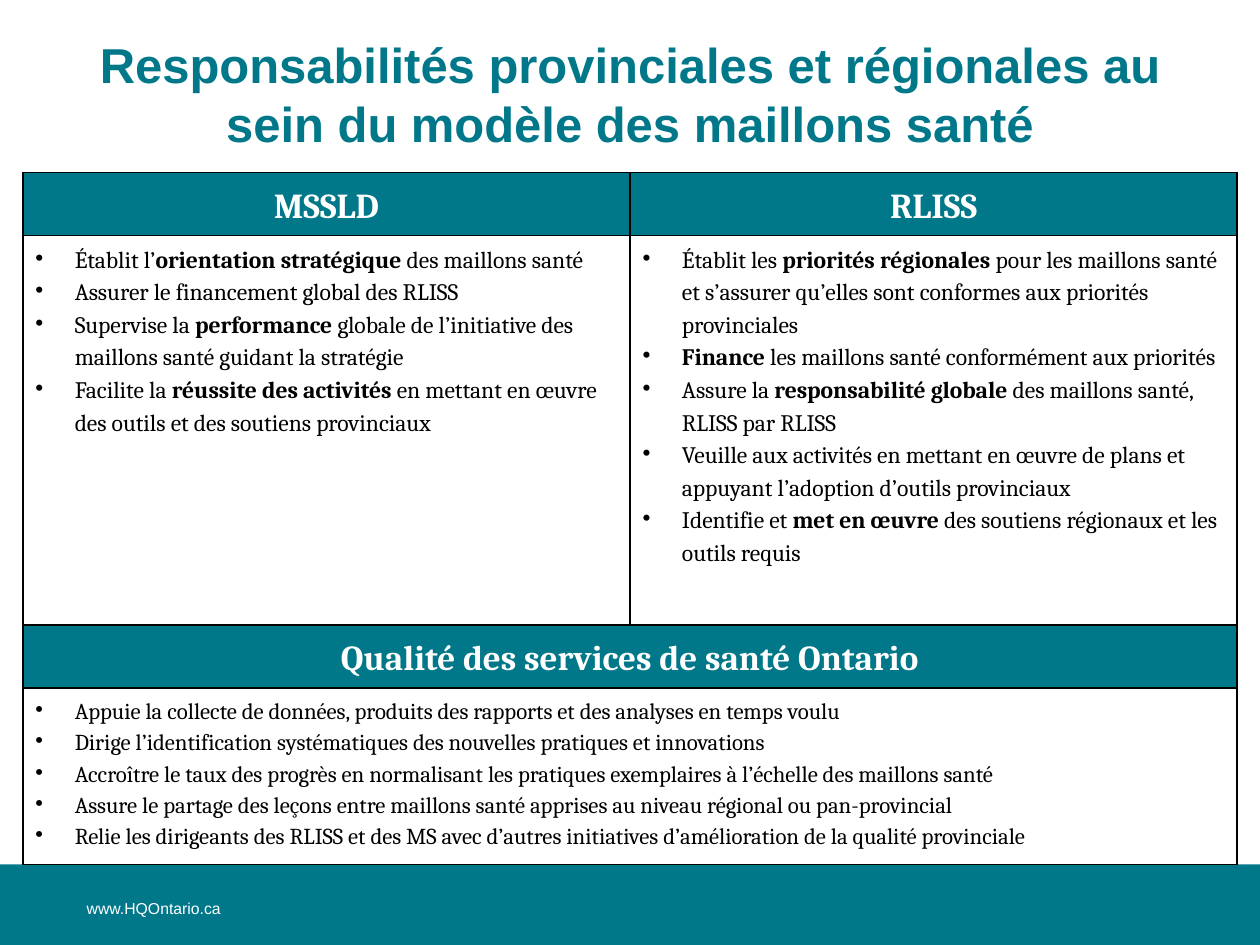
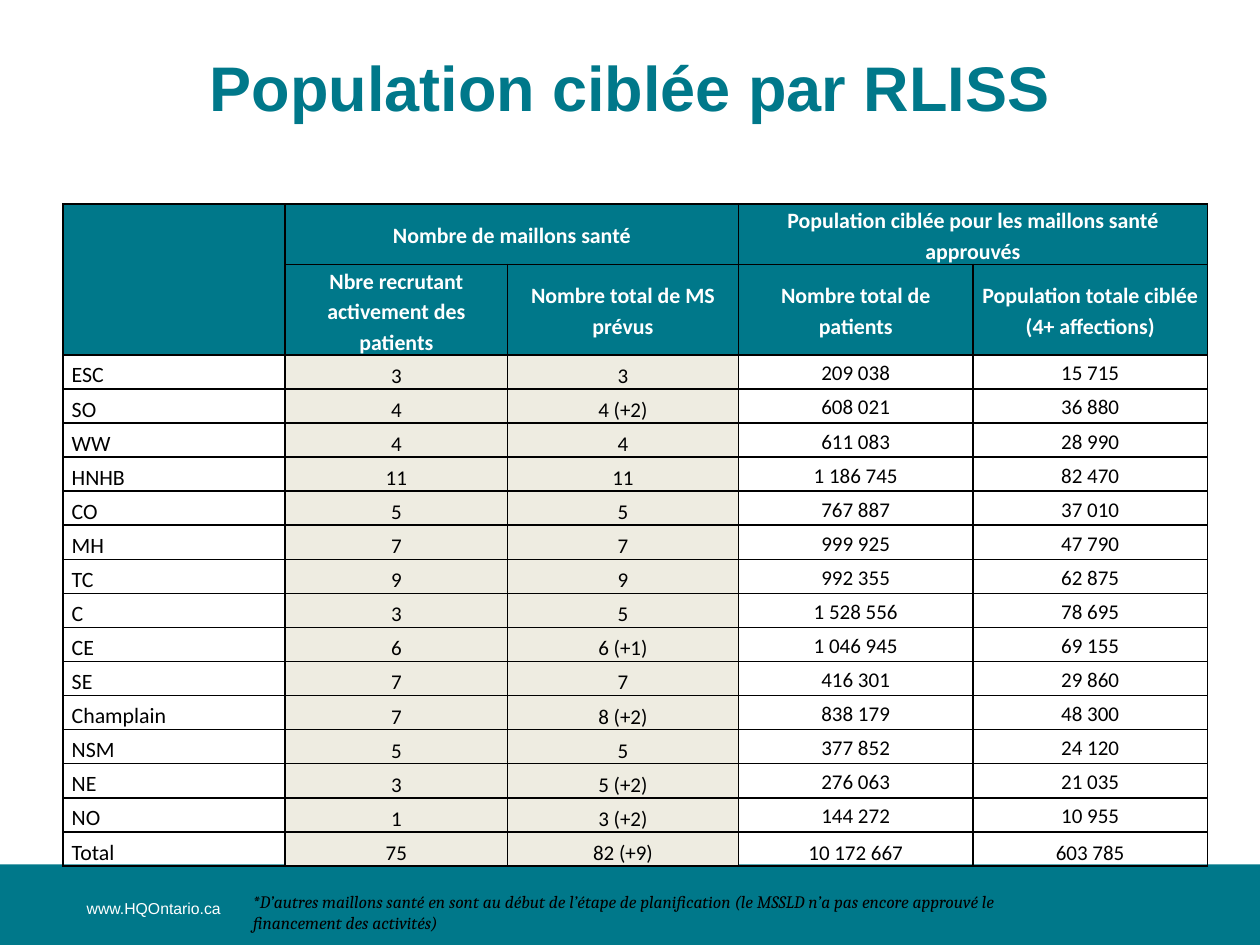
from dataclasses import dataclass, replace
from typing import NamedTuple, Optional

from lxml.etree import SubElement
from pptx import Presentation
from pptx.dml.color import RGBColor
from pptx.enum.shapes import MSO_SHAPE as Preset
from pptx.enum.text import MSO_ANCHOR as Anchor, MSO_AUTO_SIZE as AutoSize, PP_ALIGN as Align
from pptx.oxml.ns import qn
from pptx.util import Pt

TEAL = RGBColor(0x00, 0x78, 0x8A)
BEIGE = RGBColor(0xEE, 0xEC, 0xE1)
WHITE = RGBColor(0xFF, 0xFF, 0xFF)
BLACK = RGBColor(0x00, 0x00, 0x00)

BORDER_WIDTH = Pt(1)
BULLET_INDENT = Pt(22.5)
NARROW_MARGINS = (Pt(5), Pt(0))


class Box(NamedTuple):
    left: Pt
    top: Pt
    width: Pt
    height: Pt


@dataclass(frozen=True)
class TextStyle:
    font: str
    size: float
    color: RGBColor = BLACK
    bold: bool = False
    italic: bool = False
    align: Align = Align.LEFT
    line_spacing: float = 1.0
    bullet: bool = False


@dataclass(frozen=True)
class CellStyle:
    text: TextStyle
    fill: Optional[RGBColor] = None
    anchor: Anchor = Anchor.TOP
    margins: tuple = (Pt(7.2), Pt(3.6))


TITLE = TextStyle("Arial", 28, TEAL, bold=True, align=Align.CENTER)
ADDRESS = TextStyle("Arial", 9, WHITE)
FOOTNOTE = TextStyle("Cambria", 10, italic=True)

ROLE_HEADER = CellStyle(
    TextStyle("Cambria", 20, WHITE, bold=True, align=Align.CENTER, line_spacing=1.2), TEAL)
ROLE_LIST = CellStyle(TextStyle("Cambria", 13.5, line_spacing=1.2, bullet=True))
SHARED_LIST = replace(ROLE_LIST, text=replace(ROLE_LIST.text, size=13))

COUNT_HEADER = CellStyle(
    TextStyle("Calibri", 12.5, WHITE, bold=True, align=Align.CENTER, line_spacing=1.15),
    TEAL, Anchor.MIDDLE, NARROW_MARGINS)
REGION = CellStyle(TextStyle("Calibri", 12.5, line_spacing=1.15),
                   None, Anchor.BOTTOM, NARROW_MARGINS)
PATIENTS = CellStyle(TextStyle("Calibri", 12, align=Align.CENTER, line_spacing=1.15),
                     None, Anchor.MIDDLE, NARROW_MARGINS)
PATIENTS_TOTAL = replace(PATIENTS, anchor=Anchor.BOTTOM)
LINKS = replace(PATIENTS_TOTAL, fill=BEIGE)

# Text between double asterisks is bold.
MINISTRY_ROLES = [
    "Établit l’**orientation stratégique **des maillons santé",
    "Assurer le financement global des RLISS",
    "Supervise la **performance **globale de l’initiative des maillons santé guidant la stratégie",
    "Facilite la **réussite des activités **en mettant en œuvre des outils et des soutiens "
    "provinciaux",
]
REGIONAL_ROLES = [
    "Établit les **priorités régionales **pour les maillons santé et s’assurer qu’elles sont "
    "conformes aux priorités provinciales",
    "**Finance** les maillons santé conformément aux priorités",
    "Assure la **responsabilité globale **des maillons santé, RLISS par RLISS",
    "Veuille aux activités en mettant en œuvre de plans et appuyant l’adoption d’outils "
    "provinciaux",
    "Identifie et **met en œuvre** des soutiens régionaux et les outils requis",
]
QUALITY_ROLES = [
    "Appuie la collecte de données, produits des rapports et des analyses en temps voulu",
    "Dirige l’identification systématiques des nouvelles pratiques et innovations",
    "Accroître le taux des progrès en normalisant les pratiques exemplaires à l’échelle des "
    "maillons santé",
    "Assure le partage des leçons entre maillons santé apprises au niveau régional ou "
    "pan-provincial",
    "Relie les dirigeants des RLISS et des MS avec d’autres initiatives d’amélioration de la "
    "qualité provinciale",
]


class RegionRow(NamedTuple):
    name: str
    recruiting: str
    planned: str
    patients: int
    targeted: int


REGIONS = [
    RegionRow("ESC", "3", "3", 209038, 15715),
    RegionRow("SO", "4", "4 (+2)", 608021, 36880),
    RegionRow("WW", "4", "4", 611083, 28990),
    RegionRow("HNHB", "11", "11", 1186745, 82470),
    RegionRow("CO", "5", "5", 767887, 37010),
    RegionRow("MH", "7", "7", 999925, 47790),
    RegionRow("TC", "9", "9", 992355, 62875),
    RegionRow("C", "3", "5", 1528556, 78695),
    RegionRow("CE", "6", "6 (+1)", 1046945, 69155),
    RegionRow("SE", "7", "7", 416301, 29860),
    RegionRow("Champlain", "7", "8 (+2)", 838179, 48300),
    RegionRow("NSM", "5", "5", 377852, 24120),
    RegionRow("NE", "3", "5 (+2)", 276063, 21035),
    RegionRow("NO", "1", "3 (+2)", 144272, 10955),
    RegionRow("Total", "75", "82 (+9)", 10172667, 603785),
]


def add_bullet(paragraph) -> None:
    properties = paragraph._p.get_or_add_pPr()
    properties.set("marL", str(BULLET_INDENT))
    properties.set("indent", str(-BULLET_INDENT))
    SubElement(properties, qn("a:buChar")).set("char", "•")


def write_text(text_frame, lines: list[str], style: TextStyle) -> None:
    for index, line in enumerate(lines):
        paragraph = text_frame.add_paragraph() if index else text_frame.paragraphs[0]
        if style.bullet:
            add_bullet(paragraph)
        paragraph.alignment = style.align
        paragraph.line_spacing = style.line_spacing
        for position, part in enumerate(line.split("**")):
            if not part:
                continue
            run = paragraph.add_run()
            run.text = part
            run.font.name = style.font
            run.font.size = Pt(style.size)
            run.font.color.rgb = style.color
            run.font.bold = style.bold or position % 2 == 1
            run.font.italic = style.italic


def add_text_box(slide, box: Box, text: str, style: TextStyle) -> None:
    text_frame = slide.shapes.add_textbox(*box).text_frame
    text_frame.word_wrap = True
    write_text(text_frame, [text], style)


def add_titled_slide(presentation, title: str, size: float, height: Pt):
    """Add a slide with its title, bottom band and web address."""
    slide = presentation.slides.add_slide(presentation.slide_layouts[5])
    placeholder = slide.shapes.title
    placeholder.left, placeholder.top = Pt(36), Pt(21.6)
    placeholder.width, placeholder.height = Pt(648), height
    text_frame = placeholder.text_frame
    text_frame.auto_size = AutoSize.NONE
    text_frame.vertical_anchor = Anchor.MIDDLE
    write_text(text_frame, [title], replace(TITLE, size=size))

    band = slide.shapes.add_shape(Preset.RECTANGLE, Pt(0), Pt(494), Pt(720), Pt(46))
    band.shadow.inherit = False
    band.fill.solid()
    band.fill.fore_color.rgb = TEAL
    band.line.fill.background()
    add_text_box(slide, Box(Pt(42.5), Pt(510), Pt(222), Pt(19.5)), "www.HQOntario.ca", ADDRESS)
    return slide


def add_borders(cell) -> None:
    properties = cell._tc.get_or_add_tcPr()
    for side in ("a:lnL", "a:lnR", "a:lnT", "a:lnB"):
        line = SubElement(properties, qn(side), w=str(BORDER_WIDTH))
        color = SubElement(SubElement(line, qn("a:solidFill")), qn("a:srgbClr"))
        color.set("val", str(BLACK))


def add_grid(slide, left: Pt, top: Pt, widths: list[float], heights: list[float]):
    """Add a bordered table without any banding."""
    frame = slide.shapes.add_table(len(heights), len(widths), left, top,
                                   Pt(sum(widths)), Pt(sum(heights)))
    table = frame.table
    table.horz_banding = False
    for column, width in zip(table.columns, widths):
        column.width = Pt(width)
    for row, height in zip(table.rows, heights):
        row.height = Pt(height)
    for cell in table.iter_cells():
        add_borders(cell)
        cell.fill.background()
    return table


def fill_cell(cell, lines: list[str], style: CellStyle) -> None:
    cell.vertical_anchor = style.anchor
    side, edge = style.margins
    cell.margin_left = cell.margin_right = side
    cell.margin_top = cell.margin_bottom = edge
    if style.fill is not None:
        cell.fill.solid()
        cell.fill.fore_color.rgb = style.fill
    write_text(cell.text_frame, lines, style.text)


def grouped(number: int) -> str:
    """Write a number with non-breaking spaces between thousands."""
    return f"{number:,}".replace(",", " ")


def build_responsibilities(presentation) -> None:
    slide = add_titled_slide(
        presentation,
        "Responsabilités provinciales et régionales au sein du modèle des maillons santé",
        28, Pt(64))
    table = add_grid(slide, Pt(13), Pt(98.5), [347, 347], [32.4, 222.5, 32.4, 97])
    for row in (2, 3):
        table.cell(row, 0).merge(table.cell(row, 1))
    fill_cell(table.cell(0, 0), ["MSSLD"], ROLE_HEADER)
    fill_cell(table.cell(0, 1), ["RLISS"], ROLE_HEADER)
    fill_cell(table.cell(1, 0), MINISTRY_ROLES, ROLE_LIST)
    fill_cell(table.cell(1, 1), REGIONAL_ROLES, ROLE_LIST)
    fill_cell(table.cell(2, 0), ["Qualité des services de santé Ontario"], ROLE_HEADER)
    fill_cell(table.cell(3, 0), QUALITY_ROLES, SHARED_LIST)


def build_population(presentation) -> None:
    slide = add_titled_slide(presentation, "Population ciblée par RLISS", 36, Pt(55.5))
    add_text_box(
        slide, Box(Pt(137.5), Pt(505.5), Pt(490), Pt(31.5)),
        "*D’autres maillons santé en sont au début de l’étape de planification "
        "(le MSSLD n’a pas encore approuvé le financement des activités)", FOOTNOTE)
    table = add_grid(slide, Pt(36), Pt(116.5), [127, 127, 132, 134, 134],
                     [29, 40] + [19.5] * len(REGIONS))
    table.cell(0, 0).merge(table.cell(1, 0))
    fill_cell(table.cell(0, 0), [], COUNT_HEADER)
    groups = {1: "Nombre de maillons santé",
              3: "Population ciblée pour les maillons santé approuvés"}
    for column, heading in groups.items():
        table.cell(0, column).merge(table.cell(0, column + 1))
        fill_cell(table.cell(0, column), [heading], COUNT_HEADER)
    headings = [["Nbre recrutant activement des patients"], ["Nombre total de MS prévus"],
                ["Nombre total de patients"], ["Population totale ciblée", "(4+ affections)"]]
    for column, lines in enumerate(headings, start=1):
        fill_cell(table.cell(1, column), lines, COUNT_HEADER)

    for row, region in enumerate(REGIONS, start=2):
        patients_style = PATIENTS_TOTAL if region is REGIONS[-1] else PATIENTS
        styles = [REGION, LINKS, LINKS, patients_style, patients_style]
        for column, (value, style) in enumerate(zip(region, styles)):
            text = grouped(value) if isinstance(value, int) else value
            fill_cell(table.cell(row, column), [text], style)


def main() -> None:
    presentation = Presentation()
    presentation.slide_width, presentation.slide_height = Pt(720), Pt(540)
    build_responsibilities(presentation)
    build_population(presentation)
    presentation.save("out.pptx")


if __name__ == "__main__":
    main()
